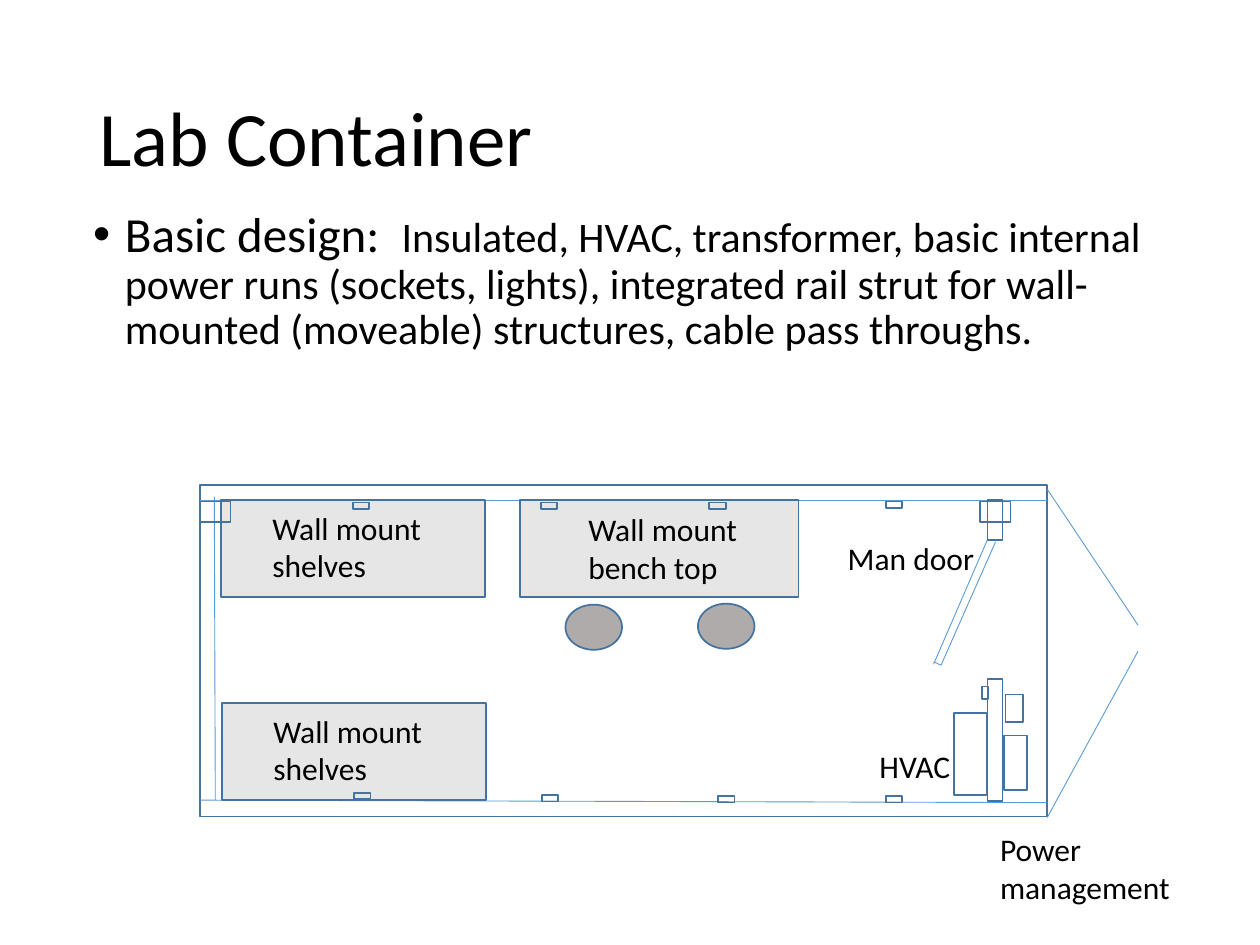
from lxml import etree
from pptx import Presentation
from pptx.dml.color import RGBColor
from pptx.enum.shapes import MSO_CONNECTOR, MSO_SHAPE
from pptx.enum.text import MSO_ANCHOR
from pptx.oxml.ns import qn
from pptx.util import Cm, Pt

RECT, OVAL = MSO_SHAPE.RECTANGLE, MSO_SHAPE.OVAL
STRAIGHT = MSO_CONNECTOR.STRAIGHT
TOP, MIDDLE = MSO_ANCHOR.TOP, MSO_ANCHOR.MIDDLE
COLORS = {"text": "000000", "outline": "43739E", "line": "5B9BD5",
          "furniture": "E7E6E6", "stool": "AFABAB"}


class Plan:
    """Draws styled elements on one slide, with all lengths in centimetres."""

    def __init__(self, slide, font="Calibri"):
        self.slide = slide
        self.font = font

    def color(self, name):
        return RGBColor.from_string(COLORS[name])

    def text(self, x, y, w, h, runs, anchor=TOP, bullet=False, **fmt):
        sp = self.slide.shapes.add_textbox(Cm(x), Cm(y), Cm(w), Cm(h))
        tf = sp.text_frame
        tf.word_wrap = True
        tf.vertical_anchor = anchor
        p = tf.paragraphs[0]
        for key, value in fmt.items():
            setattr(p, key, value)
        for content, size in runs:
            r = p.add_run()
            r.text = content
            style = {"name": self.font, "size": Pt(size)}
            for key, value in style.items():
                setattr(r.font, key, value)
            r.font.color.rgb = self.color("text")
        if bullet:
            pPr = p._p.get_or_add_pPr()
            pPr.set("marL", str(Cm(0.64)))
            pPr.set("indent", str(Cm(-0.64)))
            etree.SubElement(pPr, qn("a:buFont")).set("typeface", "Arial")
            etree.SubElement(pPr, qn("a:buChar")).set("char", "•")

    def label(self, x, y, w, h, content):
        self.text(x, y, w, h, [(content, 18)])

    def shape(self, x, y, w, h, fill=None, kind=RECT):
        sp = self.slide.shapes.add_shape(kind, Cm(x), Cm(y), Cm(w), Cm(h))
        sp.shadow.inherit = False
        if fill:
            sp.fill.solid()
            sp.fill.fore_color.rgb = self.color(fill)
        else:
            sp.fill.background()
        sp.line.color.rgb = self.color("outline")
        sp.line.width = Pt(1)

    def line(self, x1, y1, x2, y2):
        c = self.slide.shapes.add_connector(STRAIGHT, Cm(x1), Cm(y1), Cm(x2), Cm(y2))
        c.line.color.rgb = self.color("line")
        c.line.width = Pt(0.5)
        etree.SubElement(c._element.spPr, qn("a:effectLst"))

    def furniture(self, x, y, w, content, dx, dy):
        self.shape(x, y, w, 1.96, "furniture")
        self.label(x + dx, y + dy, 3.61, 1.8, content)


def main():
    prs = Presentation()
    prs.slide_width, prs.slide_height = Cm(25.4), Cm(19.05)
    s = prs.slides.add_slide(prs.slide_layouts[6])
    plan = Plan(s)

    plan.text(1.75, 1.02, 21.89, 3.68, [("Lab Container", 44)], MIDDLE, line_spacing=0.9)
    plan.text(1.63, 4.11, 21.89, 12.09, [
        ("Basic design:  ", 28),
        ("Insulated, HVAC, transformer, basic internal power runs (sockets, lights), "
         "integrated rail strut for wall-mounted (moveable) structures, "
         "cable pass throughs.", 24),
    ], bullet=True, line_spacing=0.9, space_before=Pt(10))

    plan.shape(4.04, 9.78, 17.07, 6.68)
    walls = [(4.04, 10.08, 21.11, 10.08), (4.04, 16.13, 21.11, 16.18),
             (4.32, 10.01, 4.34, 16.13)]
    end_doors = [(22.94, 12.6, 21.11, 9.86), (22.94, 13.13, 21.11, 16.48)]
    man_door = [(18.97, 13.41, 20.07, 10.92), (18.82, 13.39, 19.91, 10.87),
                (18.97, 13.41, 18.82, 13.34)]
    for ends in walls + end_doors + man_door:
        plan.line(*ends)

    partition = [(19.91, 13.69, 0.3, 2.46), (19.91, 10.08, 0.3, 0.81)]
    power = [(20.24, 14.83, 0.46, 1.09), (20.27, 14, 0.36, 0.56),
             (19.79, 13.84, 0.13, 0.25)]
    hvac = [(19.23, 14.38, 0.66, 1.65)]
    for box in partition + power + hvac:
        plan.shape(*box)

    plan.label(19.91, 16.61, 3.99, 1.8, "Power management")
    plan.label(17.48, 14.94, 2.08, 1.02, "HVAC")
    plan.label(16.84, 10.74, 3.2, 1.02, "Man door")

    plan.furniture(10.49, 10.08, 5.61, "Wall mount bench top", 1.12, 0.08)
    for x, y in [(4.45, 10.08), (4.47, 14.17)]:
        plan.furniture(x, y, 5.33, "Wall mount shelves", 0.79, 0.05)

    sockets = [(7.14, 15.98), (10.92, 16.03), (14.48, 16.05), (17.86, 16.05),
               (7.11, 10.13), (10.9, 10.13), (14.3, 10.13), (17.86, 10.11)]
    for x, y in sockets:
        plan.shape(x, y, 0.33, 0.13)
    for x, y in [(11.4, 12.19), (14.07, 12.17)]:
        plan.shape(x, y, 1.14, 0.91, "stool", OVAL)
    for x in (4.04, 19.76):
        plan.shape(x, 10.11, 0.61, 0.41)

    prs.save("out.pptx")


if __name__ == "__main__":
    main()
